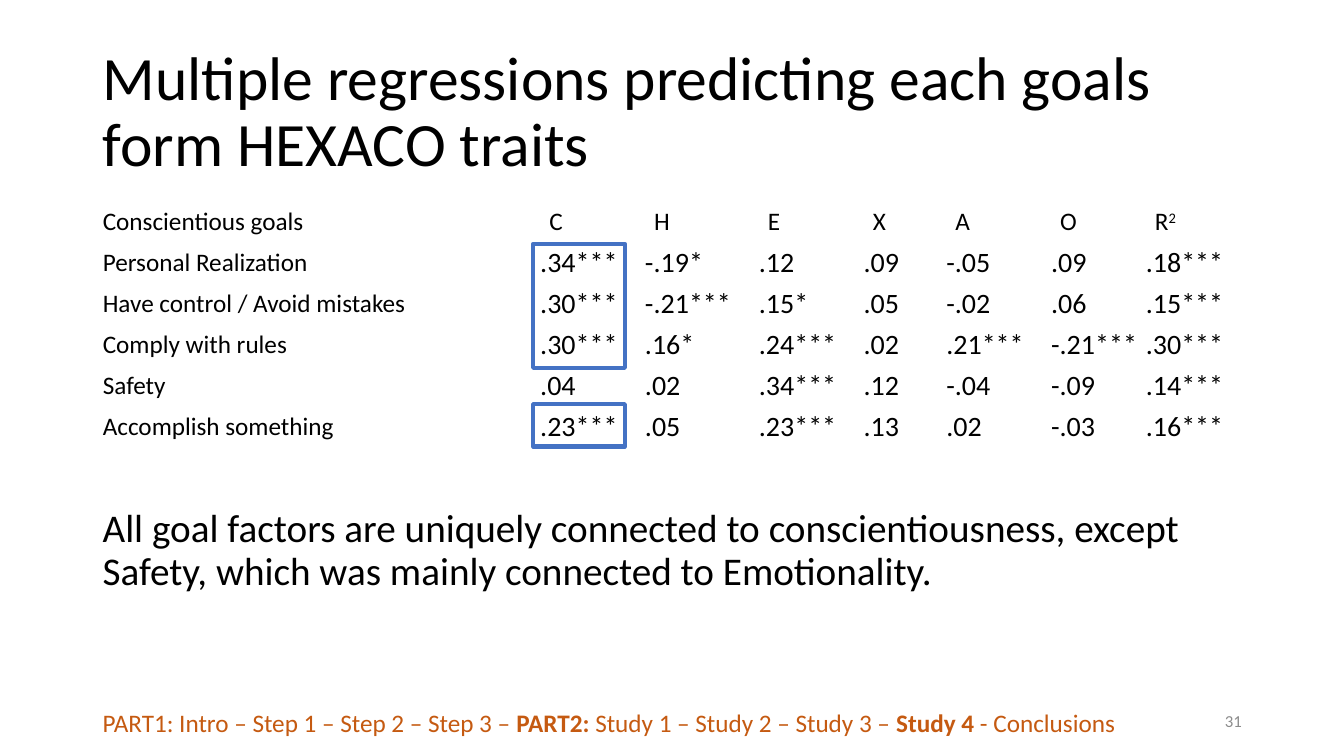
import dataclasses
import typing

import pptx
import pptx.dml.color
import pptx.enum.shapes
import pptx.enum.text
import pptx.util

Color = pptx.dml.color.RGBColor
Align = pptx.enum.text.PP_ALIGN
Anchor = pptx.enum.text.MSO_ANCHOR

SCALE = 914400 // 200  # 200 px to the inch
FONT = "Calibri"
BLACK = Color(0x00, 0x00, 0x00)
GREY = Color(0x8C, 0x8C, 0x8C)
ORANGE = Color(0xC5, 0x5A, 0x11)
BLUE = Color(0x44, 0x72, 0xC4)


def px(count: int) -> pptx.util.Emu:
    return pptx.util.Emu(count * SCALE)


@dataclasses.dataclass(frozen=True)
class Box:
    left: int
    top: int
    width: int
    height: int

    def emu(self) -> tuple:
        return px(self.left), px(self.top), px(self.width), px(self.height)


@dataclasses.dataclass(frozen=True)
class Run:
    text: str
    bold: bool = False
    raised: bool = False


@dataclasses.dataclass(frozen=True)
class Label:
    box: Box
    runs: tuple[Run, ...]
    size: int
    color: Color
    align: Align = Align.LEFT
    anchor: Anchor = Anchor.TOP
    line: float = 1.0
    before: int = 0


TITLE = Label(
    Box(184, 80, 2300, 290),
    (Run("Multiple regressions predicting each goals form HEXACO traits"),),
    44, BLACK, anchor=Anchor.MIDDLE, line=0.9,
)
LABELS = (
    Label(Box(1884, 1390, 600, 80), (Run("31"),), 12, GREY, Align.RIGHT, Anchor.MIDDLE),
    Label(
        Box(184, 1000, 2196, 350),
        (Run("All goal factors are uniquely connected to conscientiousness, "
             "except Safety, which was mainly connected to Emotionality."),),
        28, BLACK, line=0.9, before=10,
    ),
    Label(
        Box(184, 1394, 2354, 80),
        (
            Run("PART1: Intro – Step 1 – Step 2 – Step 3 – "),
            Run("PART2: ", bold=True),
            Run("Study 1 – Study 2 – Study 3 – "),
            Run("Study 4", bold=True),
            Run(" - Conclusions"),
        ),
        18, ORANGE,
    ),
)

GRID = Box(184, 400, 2298, 486)
WIDTHS = (886, 208, 226, 208, 164, 208, 188, 210)
ROWS = (
    ("Conscientious goals", "C", "H", "E", "X", "A", "O", "R"),
    ("Personal Realization", ".34***", "-.19*", ".12", ".09", "-.05", ".09", ".18***"),
    ("Have control / Avoid mistakes",
     ".30***", "-.21***", ".15*", ".05", "-.02", ".06", ".15***"),
    ("Comply with rules",
     ".30***", ".16*", ".24***", ".02", ".21***", "-.21***", ".30***"),
    ("Safety", ".04", ".02", ".34***", ".12", "-.04", "-.09", ".14***"),
    ("Accomplish something",
     ".23***", ".05", ".23***", ".13", ".02", "-.03", ".16***"),
)
FRAMES = (Box(1058, 484, 182, 246), Box(1058, 802, 182, 84))


def write(para: typing.Any, runs: tuple[Run, ...], size: int, color: Color) -> None:
    for item in runs:
        run = para.add_run()
        run.text = item.text
        font = run.font
        font.name = FONT
        font.size = pptx.util.Pt(size)
        font.bold = item.bold
        font.color.rgb = color
        if item.raised:
            font._element.set("baseline", "30000")


def fill(shape: typing.Any, label: Label) -> None:
    """Place a text shape and give it the label's words and format."""
    shape.left, shape.top, shape.width, shape.height = label.box.emu()
    frame = shape.text_frame
    frame.word_wrap = True
    frame.auto_size = pptx.enum.text.MSO_AUTO_SIZE.NONE
    frame.vertical_anchor = label.anchor
    para = frame.paragraphs[0]
    para.alignment = label.align
    para.line_spacing = label.line
    para.space_before = pptx.util.Pt(label.before)
    write(para, label.runs, label.size, label.color)


def add_grid(slide: typing.Any) -> None:
    table = slide.shapes.add_table(len(ROWS), len(WIDTHS), *GRID.emu()).table
    table.first_row = False
    table.horz_banding = False
    for column, width in zip(table.columns, WIDTHS):
        column.width = px(width)
    for r, row in enumerate(ROWS):
        table.rows[r].height = px(GRID.height // len(ROWS))
        for c, text in enumerate(row):
            cell = table.cell(r, c)
            cell.fill.background()
            value = r > 0 and c > 0
            if value:
                cell.vertical_anchor = Anchor.MIDDLE
                cell.margin_left = cell.margin_right = cell.margin_top = px(2)
                cell.margin_bottom = 0
            runs = (Run(text),)
            if text == "R":
                runs += (Run("2", raised=True),)
            write(cell.text_frame.paragraphs[0], runs, 20 if value else 18, BLACK)


def add_frame(slide: typing.Any, box: Box) -> None:
    kind = pptx.enum.shapes.MSO_SHAPE.RECTANGLE
    shape = slide.shapes.add_shape(kind, *box.emu())
    shape.shadow.inherit = False
    shape.fill.background()
    shape.line.color.rgb = BLUE
    shape.line.width = pptx.util.Pt(3)


def main() -> None:
    deck = pptx.Presentation()
    deck.slide_width, deck.slide_height = px(2667), px(1500)
    slide = deck.slides.add_slide(deck.slide_layouts[5])
    fill(slide.shapes.title, TITLE)
    add_grid(slide)
    for label in LABELS:
        fill(slide.shapes.add_textbox(*label.box.emu()), label)
    for box in FRAMES:
        add_frame(slide, box)
    deck.save("out.pptx")


if __name__ == "__main__":
    main()
